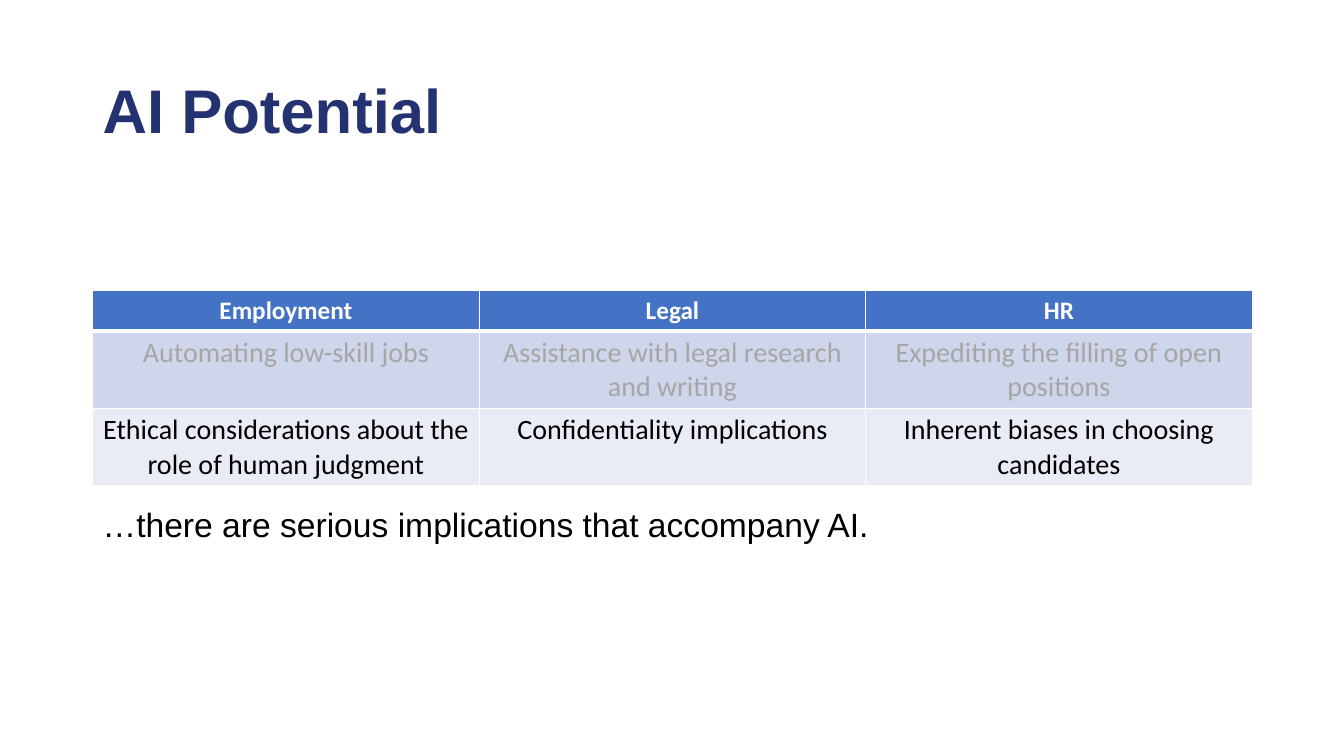
from lxml.etree import SubElement
from pptx import Presentation
from pptx.dml.color import RGBColor
from pptx.enum.text import MSO_ANCHOR, PP_ALIGN
from pptx.oxml.ns import qn
from pptx.util import Inches, Pt

NAVY = RGBColor(0x25, 0x32, 0x71)
BLUE = RGBColor(0x44, 0x72, 0xC4)
LIGHT_BLUE = RGBColor(0xCF, 0xD5, 0xEA)
PALE_BLUE = RGBColor(0xE9, 0xEB, 0xF5)
GRAY = RGBColor(0xA6, 0xA6, 0xA6)
WHITE = RGBColor(0xFF, 0xFF, 0xFF)
BLACK = RGBColor(0x00, 0x00, 0x00)

LEFT = Inches(0.92)
WIDTH = Inches(11.5)


def style_paragraph(paragraph, name, size, color, bold=False):
    paragraph.font.name = name
    paragraph.font.size = Pt(size)
    paragraph.font.color.rgb = color
    paragraph.font.bold = bold


def add_border(cell, side, points):
    line = SubElement(cell._tc.get_or_add_tcPr(), qn(f"a:ln{side}"), w=str(Pt(points)))
    fill = SubElement(line, qn("a:solidFill"))
    SubElement(fill, qn("a:srgbClr"), val=str(WHITE))


presentation = Presentation()
presentation.slide_width = Inches(13.33)
presentation.slide_height = Inches(7.5)
slide = presentation.slides.add_slide(presentation.slide_layouts[6])

title = slide.shapes.add_textbox(LEFT, Inches(0.4), WIDTH, Inches(1.45)).text_frame
title.word_wrap = True
title.vertical_anchor = MSO_ANCHOR.MIDDLE
title.text = "AI Potential"
title.paragraphs[0].line_spacing = 0.9
style_paragraph(title.paragraphs[0], "Arial", 44, NAVY, True)

rows = [
    (0.4, 18, WHITE, BLUE, ["Employment", "Legal", "HR"]),
    (0.77, 20, GRAY, LIGHT_BLUE, [
        "Automating low-skill jobs",
        "Assistance with legal research and writing",
        "Expediting the filling of open positions",
    ]),
    (0.77, 20, BLACK, PALE_BLUE, [
        "Ethical considerations about the role of human judgment",
        "Confidentiality implications",
        "Inherent biases in choosing candidates",
    ]),
]
table = slide.shapes.add_table(
    len(rows), 3, LEFT, Inches(2.88), WIDTH, Inches(1.94)
).table

for row_index, (height, size, color, background, texts) in enumerate(rows):
    table.rows[row_index].height = Inches(height)
    is_header = row_index == 0
    top = 3 if row_index == 1 else 1
    bottom = 3 if is_header else 1
    for column_index, text in enumerate(texts):
        cell = table.cell(row_index, column_index)
        for side, points in zip("LRTB", (1, 1, top, bottom)):
            add_border(cell, side, points)
        cell.fill.solid()
        cell.fill.fore_color.rgb = background
        cell.text = text
        paragraph = cell.text_frame.paragraphs[0]
        paragraph.alignment = PP_ALIGN.CENTER
        style_paragraph(paragraph, "Calibri", size, color, is_header)

closing = slide.shapes.add_textbox(LEFT, Inches(4.95), Inches(7.88), Inches(0.5)).text_frame
closing.word_wrap = False
closing.text = "…there are serious implications that accompany AI."
style_paragraph(closing.paragraphs[0], "Arial", 24, BLACK)

presentation.save("out.pptx")
